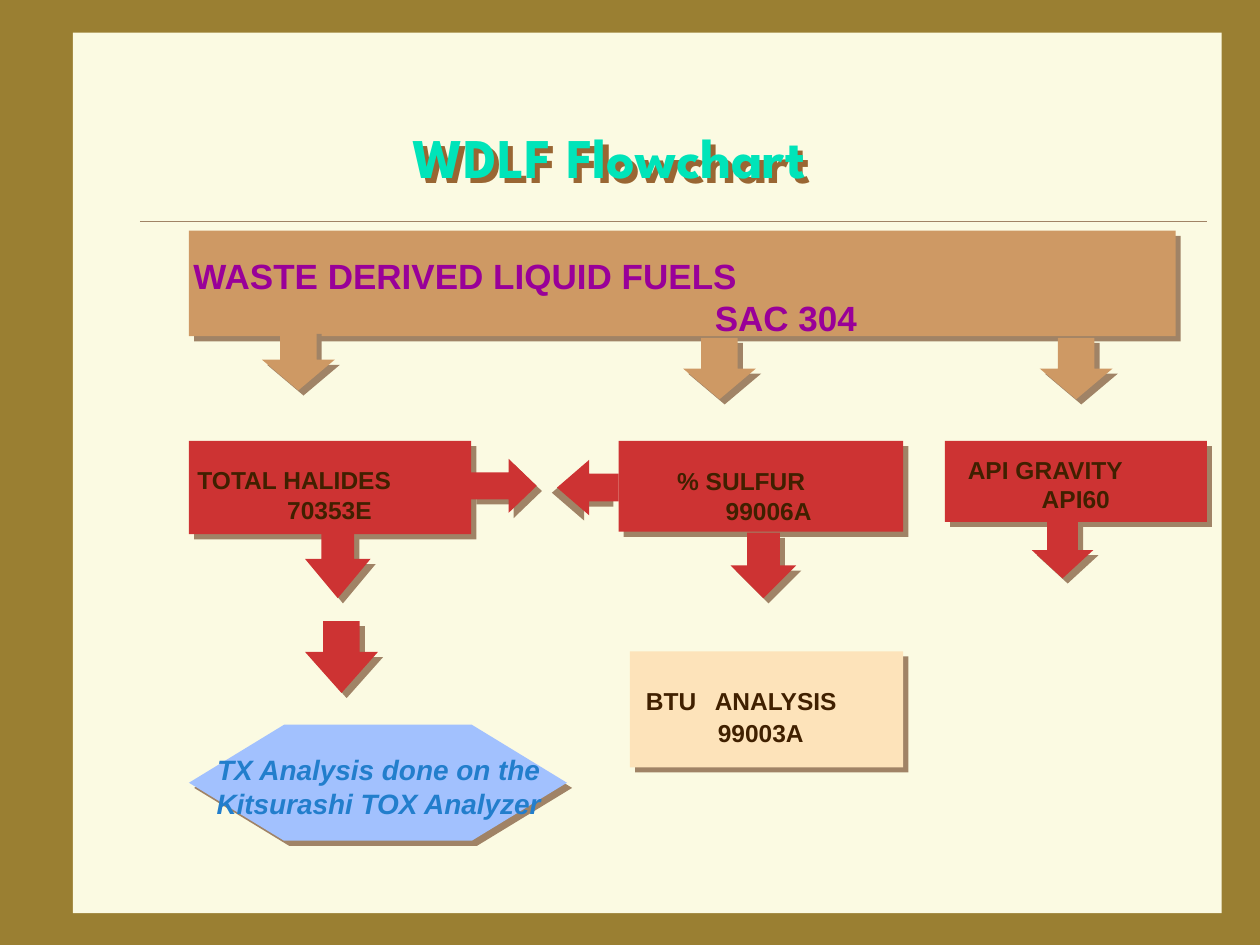
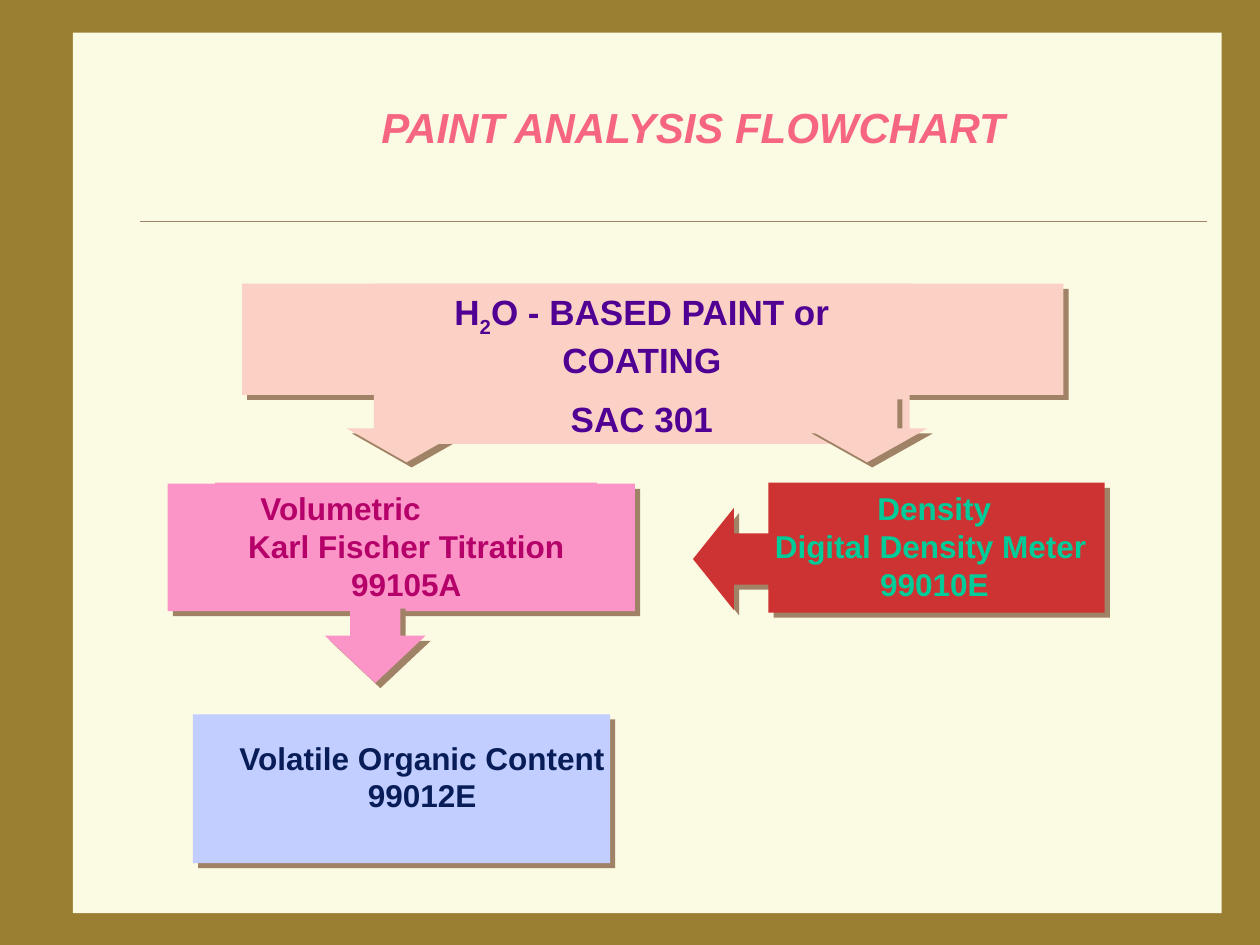
from lxml.etree import SubElement
from pptx import Presentation
from pptx.dml.color import RGBColor as Rgb
from pptx.enum.shapes import MSO_CONNECTOR as Link, MSO_SHAPE as Form
from pptx.enum.text import MSO_ANCHOR as Anchor, MSO_AUTO_SIZE as Fit, PP_ALIGN as Align
from pptx.oxml.ns import qn
from pptx.util import Cm, Pt

HUES = {
    "edge": "9A7F32", "page": "FBFAE2", "shade": "A08366", "glow": "996633",
    "tan": "CE9964", "red": "CD3333", "cream": "FDE3BA", "sky": "A2C1FE",
    "pink": "FC95C7", "peach": "FAD1C4", "pale": "C1CEFF",
    "mint": "00E4B9", "coral": "F76681", "plum": "990099", "brown": "402000",
    "blue": "227ECC", "wine": "B50069", "grape": "500093", "green": "00CC99",
    "navy": "081D58",
}
RECT, DOWN, LEFT, RIGHT = Form.RECTANGLE, Form.DOWN_ARROW, Form.LEFT_ARROW, Form.RIGHT_ARROW


def write(shape, lines, size, hue, face="Arial", slant=False, top=0.13, gap=0, tab=None):
    """Fill a shape with lines: plain text is centred, (indent, text) starts at the indent.

    Text between underscores is set as a subscript; gap is the space between lines in points.
    """
    frame = shape.text_frame
    frame.word_wrap, frame.auto_size = True, Fit.NONE
    frame.vertical_anchor = Anchor.TOP
    frame.margin_left = frame.margin_right = Cm(0.25)
    frame.margin_top, frame.margin_bottom = Cm(top), Cm(0.13)
    for i, line in enumerate(lines):
        para = frame.add_paragraph() if i else frame.paragraphs[0]
        para.line_spacing = Pt(size * 1.2)
        para.space_before = Pt(gap if i else 0)
        para.alignment = Align.CENTER
        props = para._p.get_or_add_pPr()
        if isinstance(line, tuple):
            indent, line = line
            para.alignment = Align.LEFT
            props.set("marL", str(Cm(indent)))
        if tab and "\t" in line:
            stops = SubElement(props, qn("a:tabLst"))
            SubElement(stops, qn("a:tab"), pos=str(Cm(tab)), algn="l")
        for j, piece in enumerate(line.split("_")):
            run = para.add_run()
            run.text = piece
            font = run.font
            font.name, font.size, font.bold, font.italic = face, Pt(size), True, slant
            font.color.rgb = Rgb.from_string(HUES[hue])
            if j % 2:
                run._r.get_or_add_rPr().set("baseline", "-25000")


def shade(shape, hue="shade", angle=45):
    """Give a shape a hard offset shadow."""
    shape.shadow.inherit = False
    effects = shape.element.spPr.find(qn("a:effectLst"))
    cast = SubElement(effects, qn("a:outerShdw"), dist=str(Pt(4.2)),
                      dir=str(angle * 60000), algn="ctr", rotWithShape="0")
    SubElement(cast, qn("a:srgbClr"), val=HUES[hue])


# Each part: form (None for a text box), fill, (left, top, width, height), options
fuel = [
    (RECT, "tan", (3.81, 4.65, 19.89, 2.13), {}),
    *[(DOWN, "tan", (x, y, 1.47, 1.24), {})
      for x, y in ((13.77, 6.81), (20.96, 6.81), (5.28, 6.63))],
    (None, None, (3.61, 5, 18.85, 1.96), dict(
        lines=[(0.04, "WASTE DERIVED LIQUID FUELS"), (10.55, "SAC 304")], size=20, hue="plum")),
    (RECT, "red", (19.05, 8.89, 5.28, 1.63), {}),
    (DOWN, "red", (20.8, 10.52, 1.24, 1.14), {}),
    (None, None, (18.62, 9.04, 6.15, 1.45), dict(
        lines=[(0.64, "API GRAVITY"), (2.13, "API60")], size=14, hue="brown")),
    (RECT, "cream", (12.7, 13.13, 5.51, 2.34), {}),
    (None, None, (12.77, 13.69, 5.24, 1.45), dict(
        lines=[(0, "BTU\tANALYSIS"), (1.45, "99003A")], size=14, hue="brown", gap=2, tab=1.39)),
    (RECT, "red", (12.47, 8.89, 5.74, 1.83), {}),
    (DOWN, "red", (14.73, 10.74, 1.32, 1.32), {}),
    (LEFT, "red", (11.23, 9.27, 1.24, 1.12), dict(adjust=[0.5, 0.58], angle=135)),
    (None, None, (13.36, 9.27, 4.11, 1.45), dict(
        lines=[(0.04, "% SULFUR"), (1.02, "99006A")], size=14, hue="brown")),
    (RECT, "red", (3.81, 8.89, 5.69, 1.88), {}),
    (RIGHT, "red", (9.5, 9.25, 1.32, 1.09), dict(adjust=[0.5, 0.52])),
    (DOWN, "red", (6.15, 10.69, 1.32, 1.37), dict(adjust=[0.5, 0.6])),
    (None, None, (3.61, 9.25, 6.07, 1.45), dict(
        lines=[(0.12, "TOTAL HALIDES"), (1.93, "70353E")], size=14, hue="brown")),
    (DOWN, "red", (6.15, 12.52, 1.47, 1.45), dict(adjust=[0.5, 0.57])),
    (Form.HEXAGON, "sky", (3.81, 14.61, 7.62, 2.34), dict(adjust=[0.82])),
    (None, None, (3.84, 15.04, 7.59, 1.63), dict(
        lines=["TX Analysis done on the Kitsurashi TOX Analyzer"], size=16, hue="blue", slant=True)),
]
paint = [
    (RECT, "pink", (3.38, 9.75, 9.42, 2.57), {}),
    (DOWN, "pink", (6.55, 11.86, 2.03, 1.91), {}),
    (None, "pink", (4.34, 9.73, 7.7, 2.54), dict(
        lines=[(0.66, "Volumetric"), "Karl Fischer Titration", "99105A"], size=18, hue="wine")),
    (RECT, "peach", (4.88, 5.72, 16.56, 2.24), {}),
    (DOWN, "peach", (6.99, 7.95, 2.41, 1.37), {}),
    (None, "peach", (7.54, 5.72, 10.8, 3.23), dict(
        lines=["H_2_O - BASED PAINT or COATING", "SAC 301"],
        size=20, hue="grape", top=0.25, gap=10)),
    (DOWN, "peach", (16.26, 7.95, 2.44, 1.37), {}),
    (LEFT, "red", (13.97, 10.24, 1.65, 2.06), {}),
    (RECT, "red", (15.49, 9.73, 6.78, 2.62), {}),
    (None, None, (15.24, 9.73, 7.19, 4.32), dict(
        lines=["Density", (0.13, "Digital Density Meter"), "99010E"], size=18, hue="green")),
    (RECT, "pale", (3.89, 14.4, 8.41, 3), {}),
    (None, None, (4.41, 14.76, 8.2, 2.54), dict(
        lines=["Volatile Organic Content", "99012E"], size=18, hue="navy")),
]
deck = [
    ((5.72, 2.34, 13.13, 1.6), dict(lines=["WDLF Flowchart"], size=32, hue="mint",
                                    face="League Spartan"), "glow", fuel),
    ((5.72, 1.91, 16.51, 1.27), dict(lines=["PAINT ANALYSIS FLOWCHART"], size=24, hue="coral",
                                     slant=True), None, paint),
]

prs = Presentation()
prs.slide_width, prs.slide_height = Cm(25.4), Cm(19.05)
layout = prs.slide_layouts[5]
slides = [prs.slides.add_slide(layout) for _ in deck]

# The page panel and the rule under the title live on the shared layout
back = layout.background.fill
back.solid()
back.fore_color.rgb = Rgb.from_string(HUES["edge"])
shapes = slides[0].shapes
panel = shapes.add_shape(RECT, Cm(1.47), Cm(0.66), Cm(23.16), Cm(17.75))
panel.shadow.inherit = False
panel.fill.solid()
panel.fill.fore_color.rgb = Rgb.from_string(HUES["page"])
panel.line.fill.background()
rule = shapes.add_connector(Link.STRAIGHT, Cm(2.82), Cm(4.45), Cm(24.33), Cm(4.45))
rule.line.color.rgb = Rgb.from_string(HUES["shade"])
rule.line.width = Pt(0.25)
SubElement(rule.element.spPr, qn("a:effectLst"))
for spot, item in enumerate((panel, rule), 2):
    layout.shapes.element.insert(spot, item.element)

for slide, (place, style, glow, parts) in zip(slides, deck):
    title = slide.shapes.title
    title.left, title.top, title.width, title.height = map(Cm, place)
    write(title, **style)
    if glow:
        shade(title, glow)
    for form, fill, box, more in parts:
        area = [Cm(n) for n in box]
        if form is None:
            shape = slide.shapes.add_textbox(*area)
            write(shape, **more)
        else:
            shape = slide.shapes.add_shape(form, *area)
            shape.line.fill.background()
            for i, value in enumerate(more.get("adjust", [])):
                shape.adjustments[i] = value
            shade(shape, angle=more.get("angle", 45))
        if fill:
            shape.fill.solid()
            shape.fill.fore_color.rgb = Rgb.from_string(HUES[fill])

prs.save("out.pptx")
